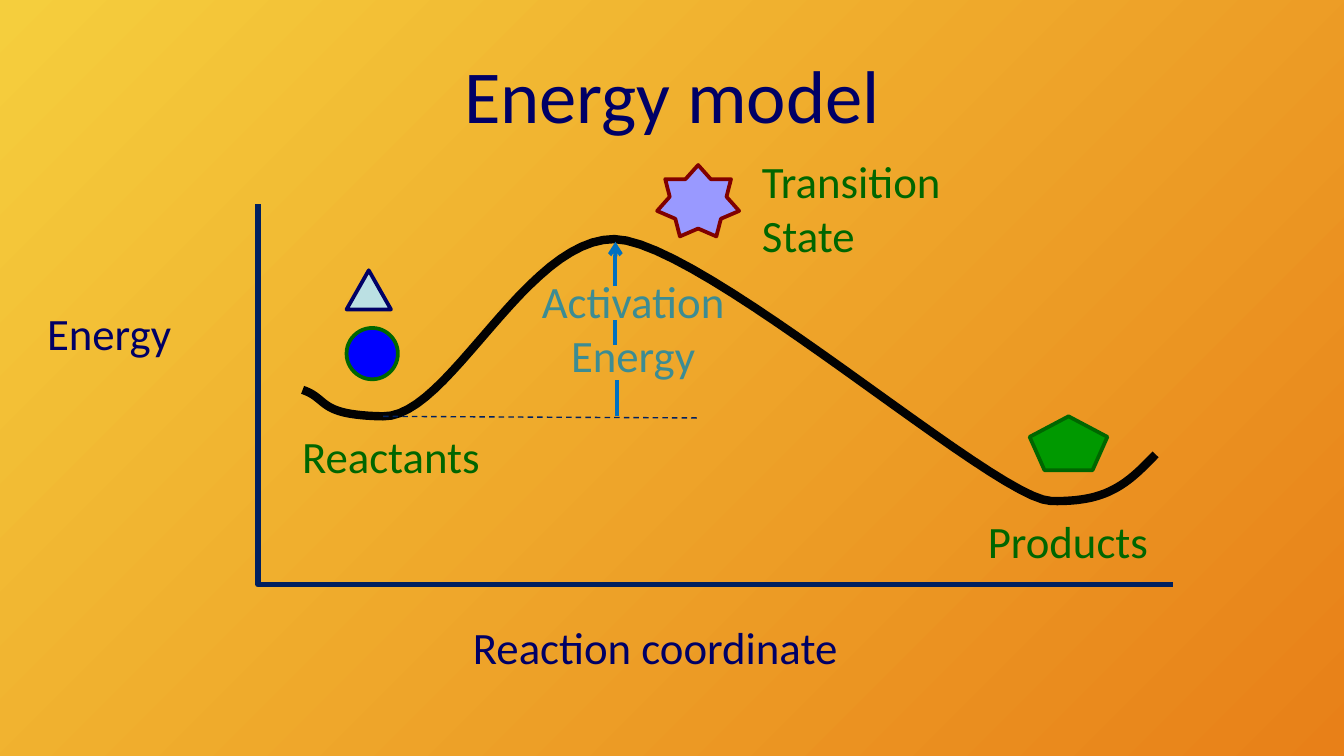
from lxml import etree
from pptx import Presentation
from pptx.dml.color import RGBColor
from pptx.enum.dml import MSO_LINE
from pptx.enum.shapes import MSO_CONNECTOR, MSO_SHAPE
from pptx.enum.text import MSO_ANCHOR, MSO_AUTO_SIZE, PP_ALIGN
from pptx.oxml.ns import qn
from pptx.util import Cm, Pt

STRAIGHT = MSO_CONNECTOR.STRAIGHT
OVAL = MSO_SHAPE.OVAL
TRIANGLE = MSO_SHAPE.ISOSCELES_TRIANGLE
PENTAGON = MSO_SHAPE.REGULAR_PENTAGON
STAR = MSO_SHAPE.STAR_7_POINT
DASH = MSO_LINE.DASH
MIDDLE = MSO_ANCHOR.MIDDLE
GROW = MSO_AUTO_SIZE.SHAPE_TO_FIT_TEXT
LEFT = PP_ALIGN.LEFT
CENTER = PP_ALIGN.CENTER

YELLOW = RGBColor(0xF5, 0xCE, 0x3D)
ORANGE = RGBColor(0xE8, 0x80, 0x18)
INDIGO = RGBColor(0x00, 0x00, 0x66)
NAVY = RGBColor(0x00, 0x20, 0x60)
BLUE = RGBColor(0x00, 0x00, 0xFF)
SKY = RGBColor(0x00, 0x70, 0xC0)
PALE = RGBColor(0xBB, 0xE0, 0xE3)
TEAL = RGBColor(0x3C, 0x8C, 0x93)
FOREST = RGBColor(0x00, 0x66, 0x00)
GREEN = RGBColor(0x00, 0x99, 0x00)
LILAC = RGBColor(0x99, 0x99, 0xFF)
MAROON = RGBColor(0x80, 0x00, 0x00)
BLACK = RGBColor(0x02, 0x02, 0x02)
FONT = "Calibri"


def write(frame, lines, size, color, align):
    para = frame.paragraphs[0]
    para.alignment = align
    for i, line in enumerate(lines):
        if i:
            para.add_line_break()
        run = para.add_run()
        run.text = line
        run.font.name = FONT
        run.font.size = Pt(size)
        run.font.color.rgb = color


def stroke(shape, color, width):
    shape.line.color.rgb = color
    shape.line.width = Pt(width)


prs = Presentation()
prs.slide_width = Cm(25.4)
prs.slide_height = Cm(14.29)
slide = prs.slides.add_slide(prs.slide_layouts[5])
shapes = slide.shapes

back = slide.background.fill
back.gradient()
back.gradient_angle = 315
for stop, color in zip(back.gradient_stops, (YELLOW, ORANGE)):
    stop.color.rgb = color

title = shapes.title
title.left, title.top = Cm(1.27), Cm(0.58)
title.width, title.height = Cm(22.86), Cm(2.39)
title.text_frame.vertical_anchor = MIDDLE
write(title.text_frame, ["Energy model"], 40, INDIGO, CENTER)

axes = [(4.88, 3.86), (4.88, 11.05), (22.17, 11.05)]

knots = [
    (5.72, 7.37), (6.22, 7.54), (5.99, 7.85),
    (7.24, 7.87), (8.48, 7.9), (9.93, 4.52),
    (11.61, 4.52), (13.28, 4.55), (18.82, 9.45),
    (19.86, 9.47), (20.9, 9.5), (21.29, 9.17), (21.84, 8.59),
]
steps = 24
curve = [knots[0]]
for k in range(0, len(knots) - 1, 3):
    for n in range(1, steps + 1):
        t = n / steps
        parts = ((1 - t) ** 3, 3 * t * (1 - t) ** 2, 3 * t * t * (1 - t), t ** 3)
        curve.append(tuple(
            sum(w * p[d] for w, p in zip(parts, knots[k:k + 4])) for d in (0, 1)
        ))

for points, color, width in ((axes, NAVY, 3), (curve, BLACK, 4.5)):
    points = [(Cm(x), Cm(y)) for x, y in points]
    pen = shapes.build_freeform(*points[0])
    pen.add_line_segments(points[1:], close=False)
    trace = pen.convert_to_shape()
    trace.shadow.inherit = False
    trace.fill.background()
    stroke(trace, color, width)

pair = shapes.add_group_shape().shapes
icons = [
    (pair, OVAL, 6.55, 6.2, 0.97, 0.97, BLUE, FOREST),
    (pair, TRIANGLE, 6.55, 5.11, 0.84, 0.74, PALE, INDIGO),
    (shapes, PENTAGON, 19.46, 7.87, 1.47, 1.02, GREEN, FOREST),
    (shapes, STAR, 12.42, 3.12, 1.55, 1.35, LILAC, MAROON),
]
for home, kind, x, y, w, h, fill, edge in icons:
    icon = home.add_shape(kind, Cm(x), Cm(y), Cm(w), Cm(h))
    icon.shadow.inherit = False
    icon.fill.solid()
    icon.fill.fore_color.rgb = fill
    stroke(icon, edge, 2)

barrier = shapes.add_group_shape().shapes
labels = [
    (shapes, ["Reaction coordinate"], 8.69, 11.58, 7.47, 1.27, INDIGO, LEFT),
    (shapes, ["Energy"], 0.64, 5.66, 2.9, 1.27, INDIGO, LEFT),
    (shapes, ["Reactants"], 5.46, 7.98, 3.91, 1.27, FOREST, LEFT),
    (shapes, ["Products"], 18.42, 9.58, 3.56, 1.27, FOREST, LEFT),
    (shapes, ["Transition", "State"], 14.15, 2.79, 3.94, 2.31, FOREST, LEFT),
    (barrier, ["Activation", "Energy"], 9.96, 5.05, 4.01, 2.31, TEAL, CENTER),
]
for home, lines, x, y, w, h, color, align in labels:
    frame = home.add_textbox(Cm(x), Cm(y), Cm(w), Cm(h)).text_frame
    frame.word_wrap = False
    frame.auto_size = GROW
    write(frame, lines, 24, color, align)

rules = [
    (shapes, 7.24, 7.87, 13.18, 7.9, NAVY, 0.75, True, False),
    (barrier, 11.63, 5.41, 11.63, 4.57, SKY, 2.25, False, True),
    (barrier, 11.66, 7.87, 11.66, 7.19, SKY, 2.25, False, False),
    (barrier, 11.63, 6.05, 11.63, 6.53, SKY, 2.25, False, False),
]
for home, x1, y1, x2, y2, color, width, dashed, arrow in rules:
    rule = home.add_connector(STRAIGHT, Cm(x1), Cm(y1), Cm(x2), Cm(y2))
    stroke(rule, color, width)
    if dashed:
        rule.line.dash_style = DASH
    props = rule._element.spPr
    if arrow:
        etree.SubElement(props.find(qn("a:ln")), qn("a:tailEnd"), type="arrow")
    etree.SubElement(props, qn("a:effectLst"))

prs.save("out.pptx")
